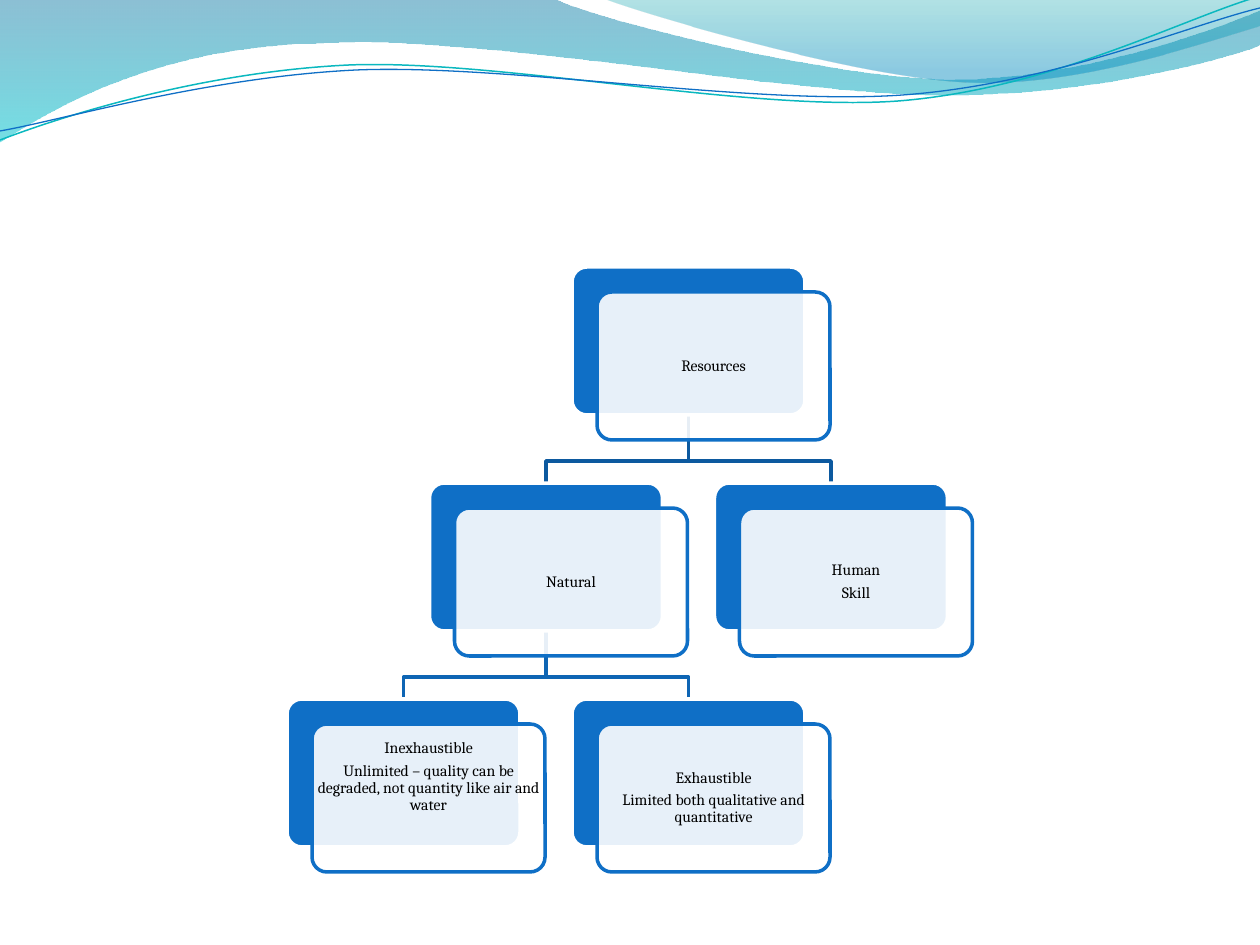
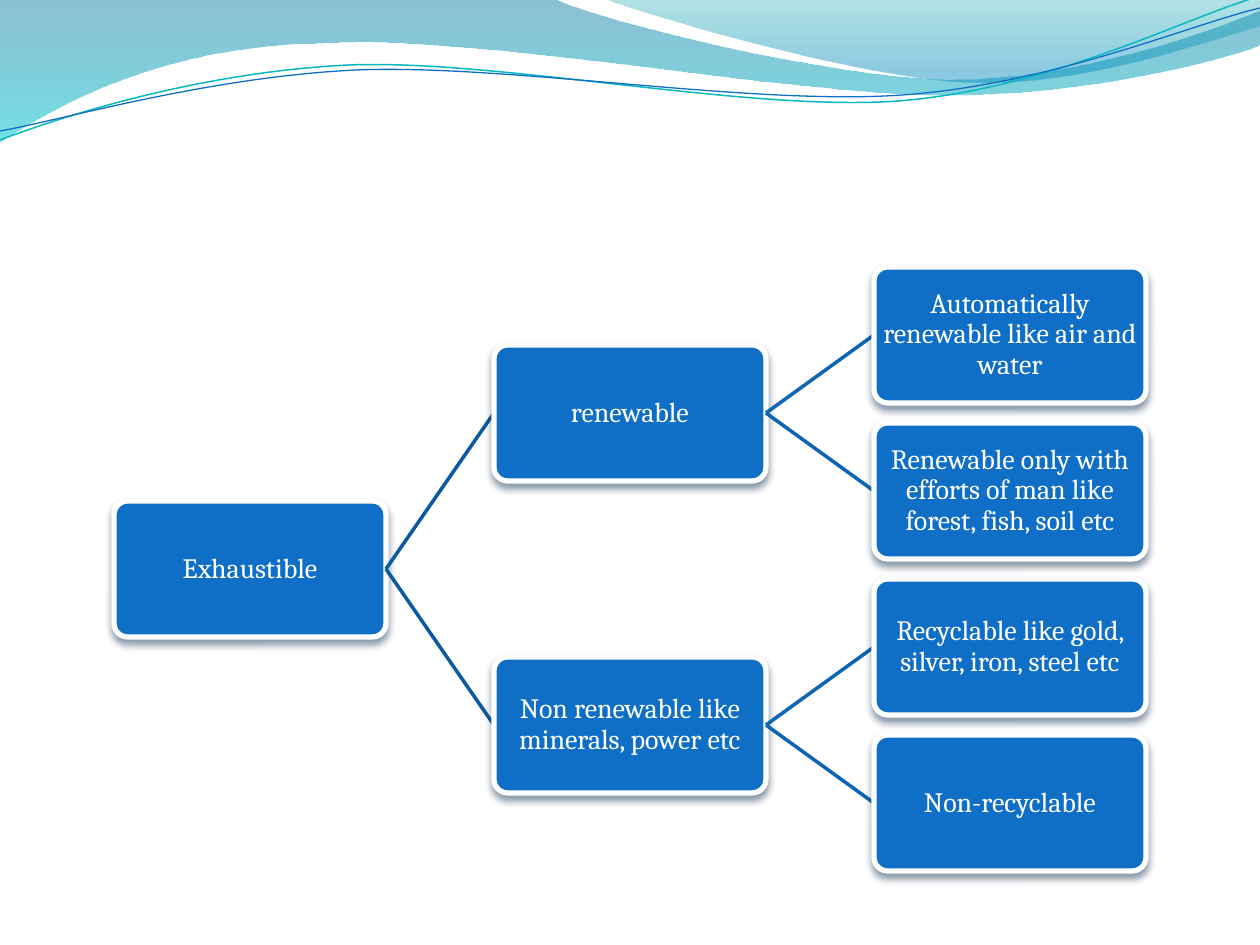
from lxml import etree
from pptx import Presentation
from pptx.dml.color import RGBColor
from pptx.enum.shapes import MSO_CONNECTOR, MSO_SHAPE
from pptx.enum.text import MSO_ANCHOR, PP_ALIGN
from pptx.oxml.ns import qn
from pptx.util import Pt

PX = 914400 / 126
STRAIGHT = MSO_CONNECTOR.STRAIGHT
ROUNDED = MSO_SHAPE.ROUNDED_RECTANGLE
MIDDLE = MSO_ANCHOR.MIDDLE
CENTER = PP_ALIGN.CENTER
FONT = "Cambria"
COLORS = {
    "blue": "0F6FC6", "link_1": "0C599F", "link_2": "0E65B4",
    "white": "FFFFFF", "black": "000000", "shadow": "042747",
    "teal": "0AB8BF", "wave_top": "0074A1", "wave_end": "00C6CF",
    "crest_top": "00A1A9", "crest_end": "008BBF",
}

WAVE = [(0, 0), (554, -1),
        ((600, 21), (837, 79), (955, 79)),
        ((1075, 79), (1207, 33), (1260, 11)),
        (1261, 45),
        ((1239, 55), (1096, 96), (940, 95)),
        ((784, 94), (481, 35), (324, 43)),
        ((163, 45), (58, 105), (-1, 142)),
        (0, 0)]
CREST = [(604, -1),
         ((641, 14), (859, 78), (969, 82)),
         ((1079, 87), (1211, 40), (1260, 26)),
         (1260, 0), (604, -1)]
TEAL_STRAND = [(0, 140),
               ((60, 117), (199, 72), (349, 65)),
               ((498, 59), (747, 112), (898, 101)),
               ((1050, 89), (1182, 19), (1257, -3))]
BLUE_STRAND = [(0, 131),
               ((59, 121), (207, 77), (357, 70)),
               ((508, 64), (752, 106), (903, 95)),
               ((1053, 84), (1186, 26), (1260, 8))]

RESOURCES = {
    "Resources": (2, 0, ["Resources"], None),
    "Natural": (1, 1, ["Natural"], "Resources"),
    "Inexhaustible": (0, 2, [
        "Inexhaustible",
        "Unlimited – quality can be degraded, not quantity like air and water",
    ], "Natural"),
    "Exhaustible": (2, 2, [
        "Exhaustible", "Limited both qualitative and quantitative"], "Natural"),
    "Human": (3, 1, ["Human", "Skill"], "Resources"),
}
EXHAUSTIBLE = ("Exhaustible", [
    ("renewable", [
        ("Automatically renewable like air and water", []),
        ("Renewable only with efforts of man like forest, fish, soil etc", []),
    ]),
    ("Non renewable like minerals, power etc", [
        ("Recyclable like gold, silver, iron, steel etc", []),
        ("Non-recyclable", []),
    ]),
])


def px(n):
    """Turn px into EMU."""
    return round(n * PX)


def rgb(name):
    """Look up a named colour."""
    return RGBColor.from_string(COLORS[name])


def set_alpha(sp, *percents):
    """Set the opacity of the shape's fill colours, in order."""
    for clr, pct in zip(list(sp.element.spPr.iter(qn("a:srgbClr"))), percents):
        etree.SubElement(clr, qn("a:alpha"), val=str(pct * 1000))


def set_line(sp, color, width):
    """Give a shape or connector a solid line."""
    sp.line.color.rgb = rgb(color)
    sp.line.width = Pt(width)


def add_shadow(sp):
    """Add a soft shadow below the shape."""
    effects = sp.element.spPr.find(qn("a:effectLst"))
    shadow = etree.SubElement(effects, qn("a:outerShdw"), blurRad=str(Pt(4.5)),
                              dist=str(Pt(3)), dir="5400000", rotWithShape="0")
    clr = etree.SubElement(shadow, qn("a:srgbClr"), val=COLORS["shadow"])
    etree.SubElement(clr, qn("a:alpha"), val="48000")


def add_text(sp, lines, size=16, color="white", bottom=0):
    """Write centred paragraphs into a shape."""
    tf = sp.text_frame
    tf.word_wrap = True
    tf.vertical_anchor = MIDDLE
    tf.margin_left = tf.margin_right = tf.margin_top = 0
    tf.margin_bottom = px(bottom)
    for i, line in enumerate(lines):
        p = tf.add_paragraph() if i else tf.paragraphs[0]
        p.alignment = CENTER
        p.line_spacing = 0.9
        p.space_after = Pt(size / 3)
        r = p.add_run()
        r.text = line
        r.font.name, r.font.size = FONT, Pt(size)
        r.font.color.rgb = rgb(color)


def add_box(s, box, fill, line, width):
    """Add a rounded box with a fill and a line."""
    sp = s.shapes.add_shape(ROUNDED, *map(px, box))
    sp.adjustments[0] = 0.1
    sp.shadow.inherit = False
    sp.fill.solid()
    sp.fill.fore_color.rgb = rgb(fill)
    set_line(sp, line, width)
    return sp


def add_path(s, outline, close=False):
    """Draw an outline of corners and cubic curves given in px."""
    parts = [part if isinstance(part[0], tuple) else (part,) for part in outline]
    points = [(px(x), px(y)) for part in parts for x, y in part]
    builder = s.shapes.build_freeform(*points[0])
    builder.add_line_segments(points[1:], close=close)
    sp = builder.convert_to_shape()
    sp.shadow.inherit = False
    segments = iter(list(sp.element.spPr.iter(qn("a:lnTo"))))
    for part in parts[1:]:
        knots = [next(segments) for _ in part]
        if len(knots) == 3:
            curve = etree.Element(qn("a:cubicBezTo"))
            knots[0].addprevious(curve)
            for knot in knots:
                curve.append(knot[0])
                knot.getparent().remove(knot)
    return sp


def add_open_path(s, outline, color, width):
    """Draw an unfilled line along an outline."""
    sp = add_path(s, outline)
    sp.fill.background()
    set_line(sp, color, width)
    return sp


def add_wave(s, outline, stops):
    """Draw a see-through area that changes colour downwards."""
    sp = add_path(s, outline, close=True)
    sp.fill.gradient()
    sp.fill.gradient_angle = 270
    for stop, (position, color, _) in zip(sp.fill.gradient_stops, stops):
        stop.position = position
        stop.color.rgb = rgb(color)
    set_alpha(sp, *(alpha for _, _, alpha in stops))
    sp.line.fill.background()
    return sp


def add_header(prs, s):
    """Draw the wave header and move it to the master."""
    parts = [
        add_wave(s, WAVE, [(0, "wave_top", 45), (1, "wave_end", 55)]),
        add_wave(s, CREST, [(0, "crest_top", 30), (0.8, "crest_end", 45)]),
        add_open_path(s, TEAL_STRAND, "teal", 0.85),
        add_open_path(s, BLUE_STRAND, "blue", 0.75),
    ]
    for i, sp in enumerate(parts):
        prs.slide_master.shapes.element.insert(2 + i, sp.element)


def resources_chart(s, left, top):
    """Draw the chart of stacked cards from the top down."""
    width, height, shift, pitch = 233, 148, 25, 285
    spots = {name: (left + pitch * col / 2, top + 216 * row)
             for name, (col, row, _, _) in RESOURCES.items()}
    for name, (_, row, _, parent) in RESOURCES.items():
        if parent:
            x, y = spots[name]
            start_x, start_y = spots[parent]
            mid, start_mid, turn = x + width / 2, start_x + width / 2, y - 22
            add_open_path(s, [(start_mid, start_y + height), (start_mid, turn),
                              (mid, turn), (mid, y)], f"link_{row}", 2)
    for name, (_, _, lines, _) in RESOURCES.items():
        x, y = spots[name]
        add_box(s, (x, y, width, height), "blue", "white", 2)
        card = add_box(s, (x + shift, y + shift, width, height), "white", "blue", 2)
        set_alpha(card, 90)
        add_text(card, lines, size=9, color="black",
                 bottom=42 if name == "Inexhaustible" else 0)


def count_leaves(node):
    """Count the end nodes below a node."""
    return sum(map(count_leaves, node[1])) or 1


def exhaustible_tree(s, node, left, top, depth=0):
    """Draw a node and its branches rightwards."""
    width, height, col_step, row_step = 272, 136, 380, 156
    text, children = node

    def middle(branch, start):
        """Find the middle height of a branch."""
        return start + (count_leaves(branch) - 1) * row_step / 2 + height / 2

    y = middle(node, top)
    sp = add_box(s, (left, y - height / 2, width, height), "blue", "white", 3)
    add_shadow(sp)
    add_text(sp, [text])
    for child in children:
        link = s.shapes.add_connector(STRAIGHT, px(left + width), px(y),
                                      px(left + col_step), px(middle(child, top)))
        set_line(link, f"link_{depth + 1}", 2)
        etree.SubElement(link.element.spPr, qn("a:effectLst"))
        exhaustible_tree(s, child, left + col_step, top, depth + 1)
        top += count_leaves(child) * row_step


def main():
    """Build and save the slides."""
    prs = Presentation()
    prs.slide_width, prs.slide_height = px(1260), px(945)
    blank = prs.slide_layouts[6]
    s = prs.slides.add_slide(blank)
    add_header(prs, s)
    resources_chart(s, 287, 267)
    s = prs.slides.add_slide(blank)
    exhaustible_tree(s, EXHAUSTIBLE, 114, 267)
    prs.save("out.pptx")


if __name__ == "__main__":
    main()
